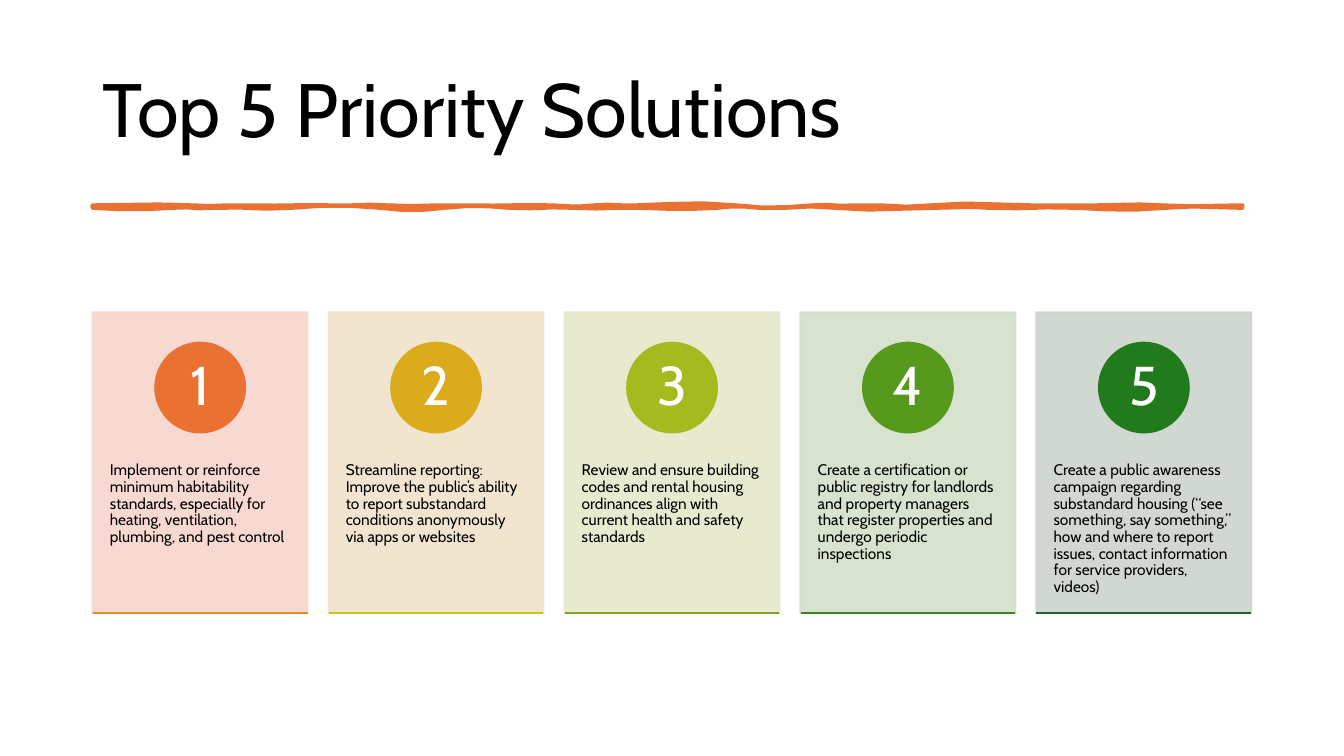
from dataclasses import dataclass

from lxml import etree
from pptx import Presentation
from pptx.dml.color import RGBColor
from pptx.enum.shapes import MSO_CONNECTOR as CONN, MSO_SHAPE as SHAPE
from pptx.enum.text import MSO_ANCHOR as ANCHOR, MSO_AUTO_SIZE as AUTOSIZE, PP_ALIGN as ALIGN
from pptx.oxml.ns import qn
from pptx.util import Inches, Pt


@dataclass(frozen=True)
class Theme:
    font: str = "Cabin"
    title_size: float = 54
    number_size: float = 39
    body_size: float = 11
    ink: str = "000000"
    white: str = "FFFFFF"
    brush: str = "E97132"
    cards: tuple = ("F7D5CE", "F0E3CB", "E5E8CA", "D3DFCA", "CCD4CD")
    circles: tuple = ("E97132", "DCAB1D", "A4BA1E", "56991D", "217A1B")
    rules: tuple = ("E58D25", "CBC11E", "7AAA1E", "398A1C", "196B24")


T = Theme()


def write(shape, text, size, color, align, anchor, insets=(0.1, 0.05)):
    """Fill a shape with one formatted paragraph."""
    tf = shape.text_frame
    tf.text = text
    tf.word_wrap = True
    tf.auto_size = AUTOSIZE.NONE
    tf.vertical_anchor = anchor
    tf.margin_left = tf.margin_right = Inches(insets[0])
    tf.margin_top = tf.margin_bottom = Inches(insets[1])
    p = tf.paragraphs[0]
    p.alignment = align
    p.line_spacing = 0.9
    font = p.runs[0].font
    font.name, font.size = T.font, Pt(size)
    font.color.rgb = RGBColor.from_string(color)


def paint(shape, color, width, join, alpha=None):
    """Give a shape one colour for fill and line, without a shadow."""
    shape.shadow.inherit = False
    shape.fill.solid()
    shape.fill.fore_color.rgb = shape.line.color.rgb = RGBColor.from_string(color)
    shape.line.width = Pt(width)
    etree.SubElement(shape._element.spPr.find(qn("a:ln")), qn(join))
    if alpha:
        for clr in shape._element.spPr.iter(qn("a:srgbClr")):
            etree.SubElement(clr, qn("a:alpha"), val=str(alpha * 1000))


prs = Presentation()
prs.slide_width, prs.slide_height = Inches(13.33), Inches(7.5)
s = prs.slides.add_slide(prs.slide_layouts[5])

LEFT = 0.92

# Title
title = s.shapes.title
title.left, title.top, title.width, title.height = map(Inches, (LEFT, 0.4, 11.5, 1.45))
write(title, "Top 5 Priority Solutions", T.title_size, T.ink, ALIGN.LEFT, ANCHOR.MIDDLE)

# Brush stroke: each knot is its x and the bend (in 1/100 inch) of the curve arriving there
top_knots = [(1.9, -2), (2.44, -1), (3.31, -1), (3.84, -2), (4.6, -1), (5.48, -1),
             (5.89, 2), (6.31, 1), (7.3, -4), (8.06, 2), (8.48, 2), (9.24, 4),
             (10.23, 0), (10.87, 0), (11.52, -2), (12.32, 0)]
bottom_knots = [(11.56, -3), (10.68, 2), (9.81, 2), (9.28, 0), (8.29, 4), (7.53, 2),
                (7.11, -2), (6.35, 1), (5.7, 2), (5.06, 2), (4.41, -3), (3.77, 3),
                (2.89, -3), (2.13, -2), (1.71, -2), (LEFT, 2)]
STEPS = 3
outline = []
for start, y, knots in ((LEFT, 2.04, top_knots), (12.32, 2.06, bottom_knots)):
    x0, bend0 = start, 0
    outline.append((x0, y))
    for x1, bend in knots:
        for i in range(1, STEPS + 1):
            t = i / STEPS
            # The bend leaving a knot mirrors the one arriving at it
            dy = 3 * t * (1 - t) * (bend * t - bend0 * (1 - t)) / 100
            outline.append((x0 + (x1 - x0) * t, y + dy))
        x0, bend0 = x1, bend
builder = s.shapes.build_freeform(Inches(outline[0][0]), Inches(outline[0][1]))
builder.add_line_segments([(Inches(x), Inches(y)) for x, y in outline[1:]], close=True)
paint(builder.convert_to_shape(), T.brush, 3.25, "a:round")

# Solution cards
solutions = [
    "Implement or reinforce minimum habitability standards, especially for heating, "
    "ventilation, plumbing, and pest control",
    "Streamline reporting: Improve the public’s ability to report substandard conditions "
    "anonymously via apps or websites",
    "Review and ensure building codes and rental housing ordinances align with current "
    "health and safety standards",
    "Create a certification or public registry for landlords and property managers that "
    "register properties and undergo periodic inspections",
    "Create a public awareness campaign regarding substandard housing (“see something, "
    "say something,” how and where to report issues, contact information for service "
    "providers, videos)",
]
CARD_W, CARD_H, CARD_TOP, PITCH, CIRCLE = 2.13, 2.98, 3.1, 2.34, 0.89
bottom = Inches(CARD_TOP + CARD_H)

for i, solution in enumerate(solutions):
    x = LEFT + i * PITCH
    card = s.shapes.add_shape(SHAPE.RECTANGLE, Inches(x), Inches(CARD_TOP),
                              Inches(CARD_W), Inches(CARD_H))
    paint(card, T.cards[i], 1.5, "a:miter", alpha=90)

    body = s.shapes.add_textbox(Inches(x), Inches(4.23), Inches(CARD_W), Inches(1.79))
    write(body, solution, T.body_size, T.ink, ALIGN.LEFT, ANCHOR.TOP, (0.17, 0.36))

    circle = s.shapes.add_shape(SHAPE.OVAL, Inches(x + (CARD_W - CIRCLE) / 2), Inches(3.4),
                                Inches(CIRCLE), Inches(CIRCLE))
    paint(circle, T.circles[i], 1.5, "a:miter")
    write(circle, str(i + 1), T.number_size, T.white, ALIGN.CENTER, ANCHOR.MIDDLE, (0.07, 0.01))

    rule = s.shapes.add_connector(CONN.STRAIGHT, Inches(x), bottom, Inches(x + CARD_W), bottom)
    rule.line.color.rgb = RGBColor.from_string(T.rules[i])
    rule.line.width = Pt(1.5)
    etree.SubElement(rule._element.spPr, qn("a:effectLst"))

prs.save("out.pptx")
